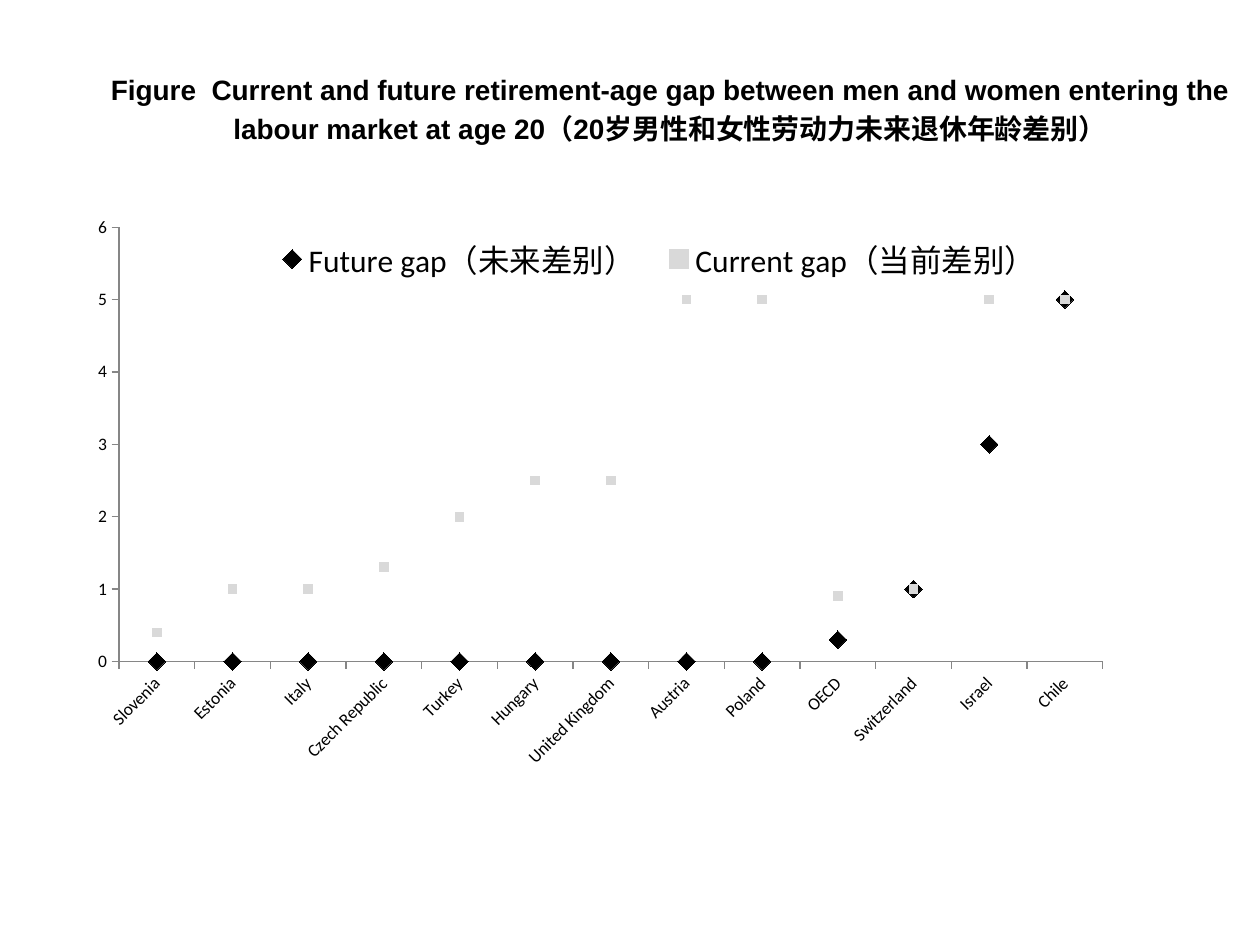
import dataclasses

import pptx
import pptx.chart.data
import pptx.dml.color
import pptx.enum.chart
import pptx.enum.text
import pptx.oxml
import pptx.oxml.ns
import pptx.util
from pptx.util import Inches


@dataclasses.dataclass(frozen=True)
class Theme:
    """Colours, fonts and type sizes of the slide."""
    ink: str = "000000"
    paper: str = "FFFFFF"
    pale: str = "D9D9D9"
    axis: str = "868686"
    title_font: str = "Arial"
    chart_font: str = "Calibri"
    title_size: int = 16
    label_size: int = 10
    legend_size: int = 18


THEME = Theme()
TITLE = ("Figure  Current and future retirement-age gap between men and women "
         "entering the labour market at age 20（20岁男性和女性劳动力未来退休年龄差别）")
GAPS = {
    "Slovenia": (0, 0.4),
    "Estonia": (0, 1),
    "Italy": (0, 1),
    "Czech Republic": (0, 1.3),
    "Turkey": (0, 2),
    "Hungary": (0, 2.5),
    "United Kingdom": (0, 2.5),
    "Austria": (0, 5),
    "Poland": (0, 5),
    "OECD": (0.3, 0.9),
    "Switzerland": (1, 1),
    "Israel": (3, 5),
    "Chile": (5, 5),
}
MARKERS = {
    "Future gap（未来差别）": ("DIAMOND", 10, THEME.ink),
    "Current gap（当前差别）": ("SQUARE", 5, THEME.pale),
}


def color(value):
    """Turn a hex value into a colour."""
    return pptx.dml.color.RGBColor.from_string(value)


def style_font(font, name, size, bold=False):
    """Set a font's face, size, weight and ink."""
    font.name = name
    font.size = pptx.util.Pt(size)
    font.bold = bold
    font.color.rgb = color(THEME.ink)


def add_title(page):
    """Add the one-cell table that carries the title."""
    frame = page.shapes.add_table(1, 1, Inches(0.83), Inches(0.6), Inches(8.98), Inches(0.45))
    table = frame.table
    table.first_row = table.horz_banding = False
    cell = table.cell(0, 0)
    cell.fill.solid()
    cell.fill.fore_color.rgb = color(THEME.paper)
    cell.margin_left = cell.margin_right = cell.margin_top = cell.margin_bottom = 0
    cell.vertical_anchor = pptx.enum.text.MSO_ANCHOR.MIDDLE
    cell.text_frame.text = TITLE
    para = cell.text_frame.paragraphs[0]
    para.alignment = pptx.enum.text.PP_ALIGN.CENTER
    style_font(para.runs[0].font, THEME.title_font, THEME.title_size, True)


def place(element, index, left, top, width, height, inner=False):
    """Give a chart part a manual layout in fractions of the chart."""
    for old in element.findall(pptx.oxml.ns.qn("c:layout")):
        element.remove(old)
    settings = {"layoutTarget": "inner"} if inner else {}
    settings.update(xMode="edge", yMode="edge", x=left, y=top, w=width, h=height)
    parts = "".join(f'<c:{name} val="{value}"/>' for name, value in settings.items())
    element.insert(index, pptx.oxml.parse_xml(
        f'<c:layout {pptx.oxml.ns.nsdecls("c")}><c:manualLayout>{parts}</c:manualLayout></c:layout>'))


def style_axis(axis):
    """Give an axis its line, ticks and labels, without gridlines."""
    axis.has_major_gridlines = False
    axis.major_tick_mark = pptx.enum.chart.XL_TICK_MARK.OUTSIDE
    axis.minor_tick_mark = pptx.enum.chart.XL_TICK_MARK.NONE
    axis.format.line.color.rgb = color(THEME.axis)
    style_font(axis.tick_labels.font, THEME.chart_font, THEME.label_size)


def style_series(series):
    """Show a series as markers only."""
    shape, size, fill = MARKERS[series.name]
    series.smooth = False
    series.format.line.fill.background()
    marker = series.marker
    marker.style = pptx.enum.chart.XL_MARKER_STYLE[shape]
    marker.size = size
    marker.format.fill.solid()
    marker.format.fill.fore_color.rgb = color(fill)
    marker.format.line.fill.background()


def add_legend(chart):
    """Add the legend across the top of the plot."""
    chart.has_legend = True
    legend = chart.legend
    legend.position = pptx.enum.chart.XL_LEGEND_POSITION.RIGHT
    legend.include_in_layout = False
    style_font(legend.font, THEME.chart_font, THEME.legend_size)
    place(legend._element, 1, 0.19, 0.06, 0.74, 0.08)


def add_gap_chart(page):
    """Add the chart of retirement-age gaps by country."""
    data = pptx.chart.data.CategoryChartData()
    data.categories = list(GAPS)
    for name, values in zip(MARKERS, zip(*GAPS.values())):
        data.add_series(name, values)
    chart = page.shapes.add_chart(
        pptx.enum.chart.XL_CHART_TYPE.LINE_MARKERS,
        Inches(0.43), Inches(1.55), Inches(8.58), Inches(5.07), data).chart
    chart.has_title = False
    style_font(chart.font, THEME.chart_font, THEME.label_size)
    chart.plots[0].vary_by_categories = False
    for series in chart.plots[0].series:
        style_series(series)
    for axis in (chart.category_axis, chart.value_axis):
        style_axis(axis)
    chart.category_axis._element.txPr.bodyPr.set("rot", "-2700000")
    scale = chart.value_axis
    scale.minimum_scale, scale.maximum_scale, scale.major_unit = 0, 6, 1
    scale.tick_labels.number_format = "0"
    scale.tick_labels.number_format_is_linked = False
    add_legend(chart)
    place(chart._chartSpace.chart.plotArea, 0, 0.06, 0.05, 0.91, 0.68, inner=True)


def main():
    """Build the slide and save it."""
    deck = pptx.Presentation()
    deck.slide_width, deck.slide_height = Inches(10), Inches(7.5)
    page = deck.slides.add_slide(deck.slide_layouts[6])
    add_gap_chart(page)
    add_title(page)
    deck.save("out.pptx")


if __name__ == "__main__":
    main()
